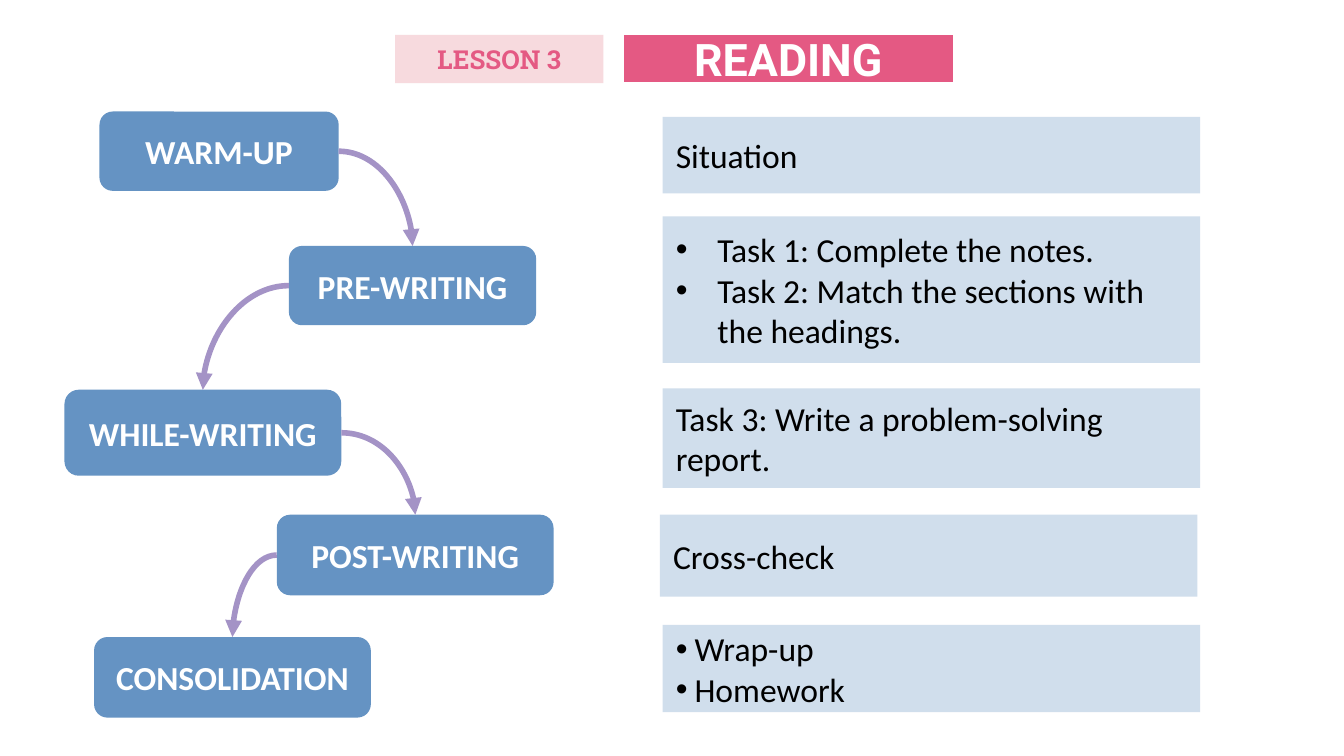
from dataclasses import dataclass
from itertools import pairwise
from typing import Any

import pptx
import pptx.dml.color
import pptx.enum.shapes
import pptx.enum.text
import pptx.oxml.ns
import pptx.oxml.xmlchemy
import pptx.util

Inches = pptx.util.Inches
Pt = pptx.util.Pt
RGBColor = pptx.dml.color.RGBColor
Kind = pptx.enum.shapes.MSO_SHAPE
Align = pptx.enum.text.PP_ALIGN
qn = pptx.oxml.ns.qn
Node = pptx.oxml.xmlchemy.OxmlElement

WHITE = RGBColor(0xFF, 0xFF, 0xFF)
BLACK = RGBColor(0x00, 0x00, 0x00)
BLUE = RGBColor(0x65, 0x93, 0xC3)
PALE = RGBColor(0xD0, 0xDE, 0xEC)
PURPLE = RGBColor(0xA4, 0x93, 0xC6)
PINK = RGBColor(0xE4, 0x59, 0x83)
BLUSH = RGBColor(0xF7, 0xDA, 0xDE)


@dataclass
class Style:
    fill: RGBColor
    color: RGBColor
    font: str = "Calibri"
    size: int = 18
    bold: bool = True
    kind: Any = Kind.RECTANGLE
    align: Any = Align.CENTER


@dataclass
class Box:
    text: str
    left: float
    top: float
    width: float
    height: float
    indent: float = 0


STAGE = Style(BLUE, WHITE, kind=Kind.ROUNDED_RECTANGLE)
NOTE = Style(PALE, BLACK, bold=False, align=Align.LEFT)
TITLE = Style(PINK, WHITE, "Roboto", 24)
LABEL = Style(BLUSH, PINK, "Roboto Slab", 14)

STAGES = [
    Box("WARM-UP", 0.74, 0.83, 1.78, 0.59),
    Box("PRE-WRITING", 2.15, 1.83, 1.84, 0.59),
    Box("WHILE-WRITING", 0.48, 2.9, 2.06, 0.64),
    Box("POST-WRITING", 2.06, 3.83, 2.06, 0.6),
    Box("CONSOLIDATION", 0.7, 4.74, 2.06, 0.6),
]
NOTES = [
    Box("Situation", 4.93, 0.87, 4, 0.57),
    Box("Task 1: Complete the notes.\n"
        "Task 2: Match the sections with the headings.",
        4.93, 1.61, 4, 1.09, 0.31),
    Box("Task 3: Write a problem-solving report.", 4.93, 2.89, 4, 0.74),
    Box("Cross-check", 4.91, 3.83, 4, 0.61),
    Box("Wrap-up\nHomework", 4.93, 4.65, 4, 0.65, 0.14),
]


def add_bullet(para: Any, indent: float) -> None:
    props = para._p.get_or_add_pPr()
    props.set("marL", str(Inches(indent)))
    props.set("indent", str(-Inches(indent)))
    font = Node("a:buFont")
    font.set("typeface", "Arial")
    mark = Node("a:buChar")
    mark.set("char", "•")
    props.extend([font, mark])


def draw_box(slide: Any, box: Box, style: Style) -> Any:
    shape = slide.shapes.add_shape(
        style.kind, Inches(box.left), Inches(box.top),
        Inches(box.width), Inches(box.height))
    shape.shadow.inherit = False
    shape.fill.solid()
    shape.fill.fore_color.rgb = style.fill
    shape.line.fill.background()
    frame = shape.text_frame
    frame.word_wrap = True
    frame.vertical_anchor = pptx.enum.text.MSO_ANCHOR.MIDDLE
    frame.text = box.text
    for para in frame.paragraphs:
        para.alignment = style.align
        if box.indent:
            add_bullet(para, box.indent)
        for run in para.runs:
            run.font.name = style.font
            run.font.size = Pt(style.size)
            run.font.bold = style.bold
            run.font.color.rgb = style.color
    return shape


def draw_curve(slide: Any, start: Any, end: Any) -> None:
    curve = slide.shapes.add_connector(
        pptx.enum.shapes.MSO_CONNECTOR.CURVE, 0, 0, 0, 0)
    curve.begin_connect(start, 3 if end.left > start.left else 1)
    curve.end_connect(end, 0)
    curve.line.color.rgb = PURPLE
    curve.line.width = Pt(3)
    head = Node("a:tailEnd")
    head.set("type", "triangle")
    curve.line._get_or_add_ln().append(head)
    props = curve._element.spPr
    props.find(qn("a:prstGeom")).set("prst", "curvedConnector2")
    props.append(Node("a:effectLst"))


def main() -> None:
    deck = pptx.Presentation()
    deck.slide_width = Inches(10)
    deck.slide_height = Inches(10 * 9 / 16)
    slide = deck.slides.add_slide(deck.slide_layouts[6])
    steps = [draw_box(slide, box, STAGE) for box in STAGES]
    for start, end in pairwise(steps):
        draw_curve(slide, start, end)
    for box in NOTES:
        draw_box(slide, box, NOTE)
    title = draw_box(slide, Box("READING", 4.63, 0.25, 2.47, 0.37), TITLE)
    title.line.color.rgb = WHITE
    title.line.width = Pt(1.5)
    draw_box(slide, Box("LESSON 3", 2.94, 0.26, 1.55, 0.36), LABEL)
    deck.save("out.pptx")


if __name__ == "__main__":
    main()
